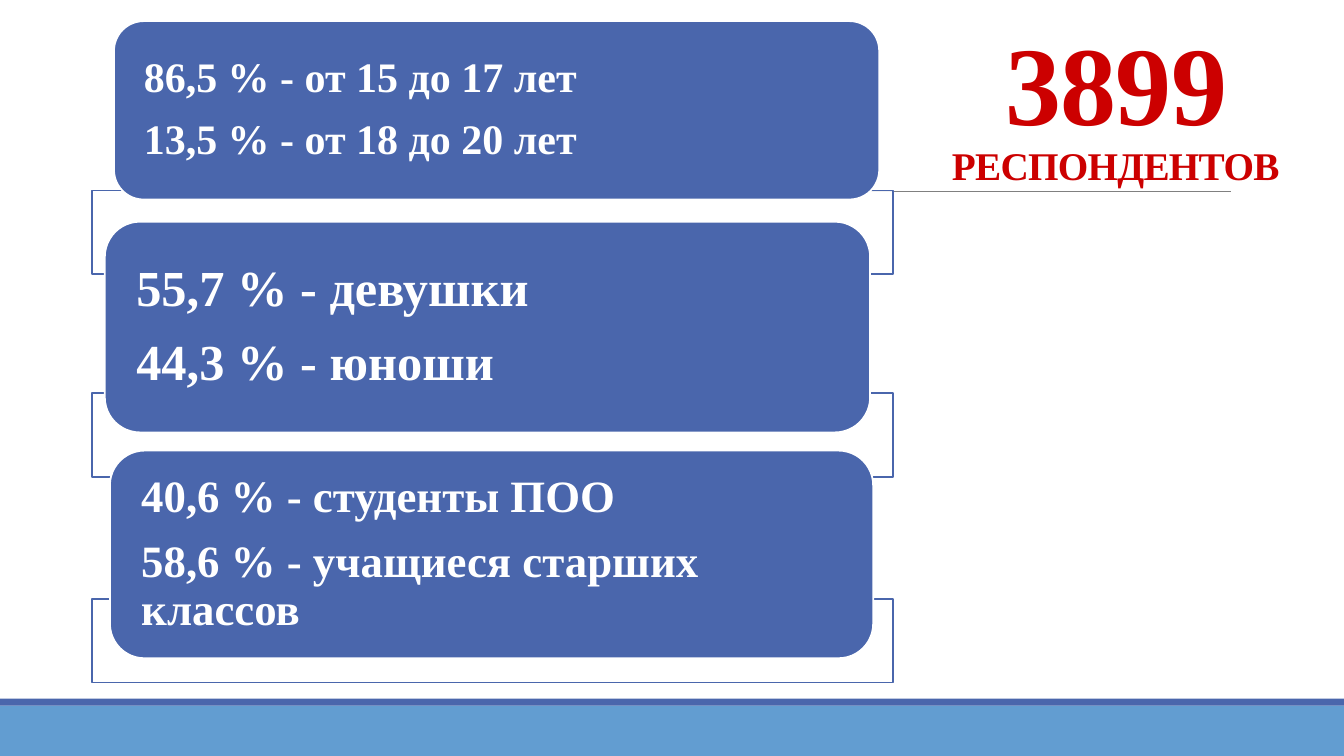
from dataclasses import dataclass

from lxml import etree
from pptx import Presentation
from pptx import util as u
from pptx.dml.color import RGBColor
from pptx.enum import shapes, text
from pptx.oxml import ns


@dataclass(frozen=True)
class Theme:
    font: str = "Times New Roman"
    blue: str = "4A66AC"
    sky: str = "629DD1"
    white: str = "FFFFFF"
    gray: str = "808080"
    red: str = "CC0000"
    count_size: int = 80
    caption_size: int = 28
    outline: float = 1.25
    hairline: float = 0.5


class SlideBuilder:
    """Places elements on a grid of 100 columns by 100 rows."""

    def __init__(self, deck, theme):
        self.theme = theme
        self.column = deck.slide_width / 100
        self.row = deck.slide_height / 100
        self.slide = deck.slides.add_slide(deck.slide_layouts[5])
        self.shapes = self.slide.shapes

    def place(self, x, y, w, h):
        return (round(x * self.column), round(y * self.row),
                round(w * self.column), round(h * self.row))

    def style_font(self, font, size, color):
        font.name, font.size, font.bold = self.theme.font, u.Pt(size), True
        font.color.rgb = RGBColor.from_string(color)

    def block(self, area, fill, line=None, alpha=None,
              kind=shapes.MSO_SHAPE.RECTANGLE):
        block = self.shapes.add_shape(kind, *self.place(*area))
        block.shadow.inherit = False
        block.fill.solid()
        block.fill.fore_color.rgb = RGBColor.from_string(fill)
        if line:
            block.line.color.rgb = RGBColor.from_string(line)
            block.line.width = u.Pt(self.theme.outline)
        else:
            block.line.fill.background()
        if alpha:
            color = block.fill._xPr.find(".//" + ns.qn("a:srgbClr"))
            etree.SubElement(color, ns.qn("a:alpha"), val=str(alpha * 1000))
        return block

    def rule(self, x1, x2, y):
        left, top, width, _ = self.place(x1, y, x2 - x1, 0)
        rule = self.shapes.add_connector(
            shapes.MSO_CONNECTOR.STRAIGHT, left, top, left + width, top)
        rule.line.color.rgb = RGBColor.from_string(self.theme.gray)
        rule.line.width = u.Pt(self.theme.hairline)
        etree.SubElement(rule._element.spPr, ns.qn("a:effectLst"))

    def title(self, area, parts):
        title = self.shapes.title
        title.left, title.top, title.width, title.height = self.place(*area)
        self.shapes._spTree.append(title._element)  # in front of the rule
        frame = title.text_frame
        frame.word_wrap = True
        frame.auto_size = text.MSO_AUTO_SIZE.NONE
        frame.vertical_anchor = text.MSO_ANCHOR.BOTTOM
        heading = frame.paragraphs[0]
        heading.alignment = text.PP_ALIGN.CENTER
        heading.line_spacing = 0.85
        for words, size in parts:
            run = heading.add_run()
            run.text = words
            self.style_font(run.font, size, self.theme.red)
            run.font._element.set("spc", "-50")

    def card(self, area, lines, size):
        card = self.block(area, self.theme.blue, self.theme.white,
                          kind=shapes.MSO_SHAPE.ROUNDED_RECTANGLE)
        frame = card.text_frame
        frame.word_wrap = True
        frame.vertical_anchor = text.MSO_ANCHOR.MIDDLE
        frame.margin_left = frame.margin_right = u.Inches(0.21)
        frame.margin_top = frame.margin_bottom = 0
        frame.text = "\n".join(lines)
        for share in frame.paragraphs:
            share.alignment = text.PP_ALIGN.LEFT
            share.line_spacing = 0.9
            share.space_after = u.Pt(round(0.39 * size))
            self.style_font(share.font, size, self.theme.white)


def main():
    deck = Presentation()
    deck.slide_width, deck.slide_height = u.Inches(13.33), u.Inches(7.5)
    theme = Theme()
    page = SlideBuilder(deck, theme)

    # Footer bands and the rule under the title
    page.block((0, 93.33, 100, 6.67), theme.sky)
    page.block((0, 92.4, 100, 0.93), theme.blue)
    page.rule(9.83, 91.6, 25.33)

    # Number of respondents
    page.title((68.42, 0, 29.18, 25.6),
               [("3899 ", theme.count_size),
                ("РЕСПОНДЕНТОВ", theme.caption_size)])

    # Respondent groups: frame top, card area, text size, shares
    groups = [
        (25.2, (8.48, 2.8, 56.94, 23.6), 30,
         ["86,5 % - от 15 до 17 лет", "13,5 % - от 18 до 20 лет"]),
        (52, (7.8, 29.33, 56.94, 27.87), 36,
         ["55,7 % - девушки", "44,3 % - юноши"]),
        (79.2, (8.18, 59.6, 56.79, 27.47), 32,
         ["40,6 % - студенты ПОО", "58,6 % - учащиеся старших классов"]),
    ]
    for frame_top, card_area, size, shares in groups:
        page.block((6.83, frame_top, 59.64, 11.07), theme.white,
                   theme.blue, alpha=90)
        page.card(card_area, shares, size)

    deck.save("out.pptx")


if __name__ == "__main__":
    main()
